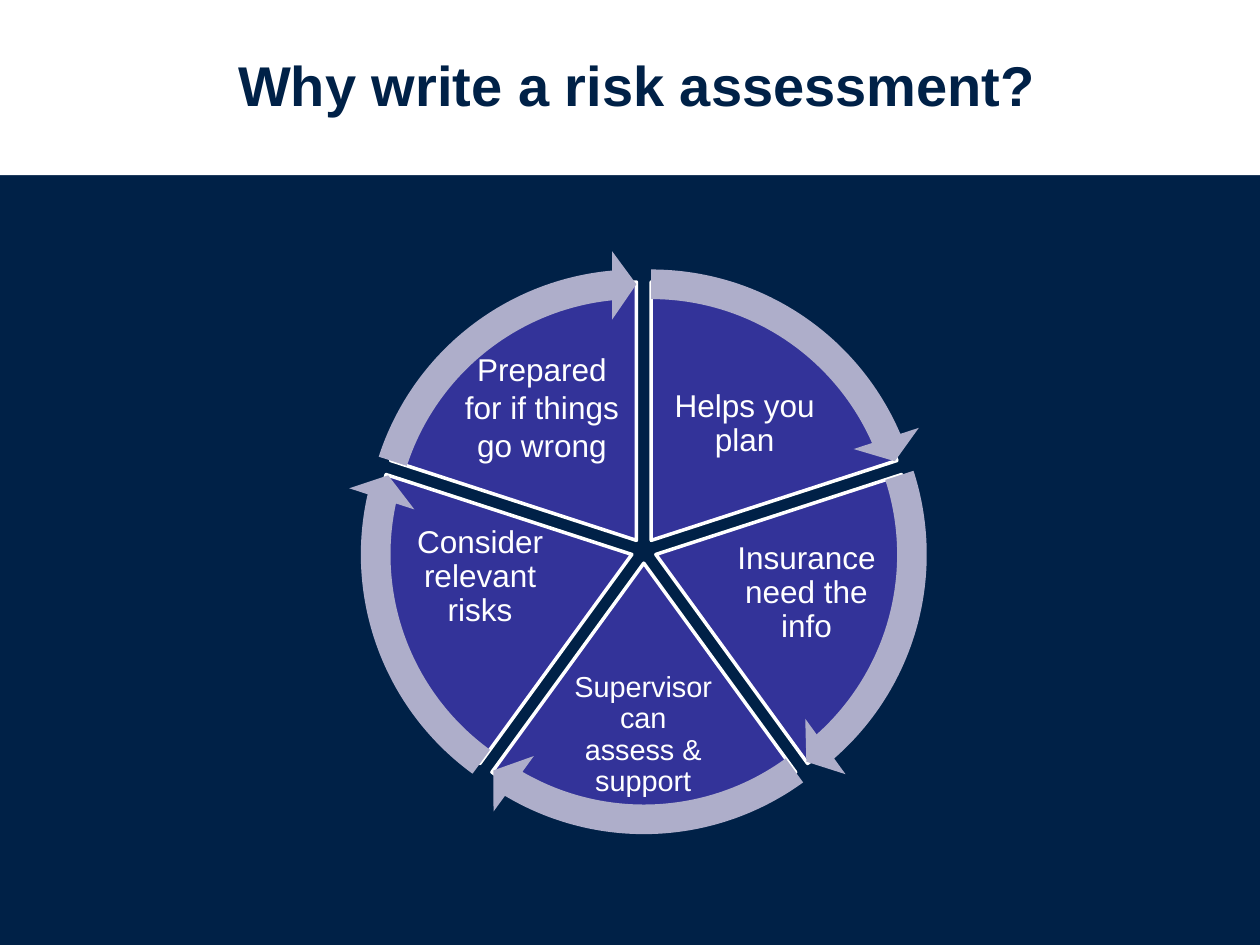
import math

from pptx import Presentation
from pptx.dml.color import RGBColor
from pptx.enum import shapes, text
from pptx.util import Inches, Pt

NAVY = RGBColor(0x00, 0x21, 0x47)
INDIGO = RGBColor(0x33, 0x33, 0x99)
LILAC = RGBColor(0xAE, 0xAE, 0xCA)
WHITE = RGBColor(0xFF, 0xFF, 0xFF)

TITLE = "Why write a risk assessment?"

# Clockwise from the top: wording, label box (left, top, width, height), size, line spacing
REASONS = [
    ("Helps you plan", (5.25, 2.93, 1.32, 0.88), 18, 0.9),
    ("Insurance need the info", (5.79, 4.22, 1.22, 0.98), 18, 0.9),
    ("Supervisor can assess & support", (4.52, 5.3, 1.17, 1.07), 16.5, 0.9),
    ("Consider relevant risks", (3.2, 4.09, 1.22, 0.98), 18, 0.9),
    ("Prepared for if things go wrong", (3.64, 2.79, 1.32, 0.88), 18, 1.0),
]

# Wheel geometry, in inches and degrees
CENTER_X, CENTER_Y = 5.11, 4.37
GAP = 0.1
PIE_SIZE, ARROW_SIZE = 4.1, 4.61
STEP = 360 / len(REASONS)
ARROW_SWEEP = 66.54
ARROW_WIDTH, HEAD_ANGLE, HEAD_WIDTH = 0.051, 3.275, 0.059


def angle_value(degrees):
    """Shape angles count 60000 per degree; adjustments are scaled by 100000."""
    return degrees % 360 * 0.6


def add_part(page, kind, place, fill, line=None, adjustments=()):
    part = page.shapes.add_shape(kind, *map(Inches, place))
    part.shadow.inherit = False
    part.fill.solid()
    part.fill.fore_color.rgb = fill
    if line is None:
        part.line.fill.background()
    else:
        part.line.color.rgb = line
        part.line.width = Pt(2)
    for index, value in enumerate(adjustments):
        part.adjustments[index] = value
    return part


def add_text(page, words, place, size, color, bold=False, spacing=1.0,
             align=text.PP_ALIGN.CENTER, inset=0.0):
    box = page.shapes.add_textbox(*map(Inches, place))
    frame = box.text_frame
    frame.word_wrap = True
    frame.vertical_anchor = text.MSO_ANCHOR.MIDDLE
    frame.margin_left = frame.margin_right = Inches(inset)
    frame.margin_top = frame.margin_bottom = Inches(inset)
    para = frame.paragraphs[0]
    para.alignment = align
    para.line_spacing = spacing
    span = para.add_run()
    span.text = words
    span.font.name = "Arial"
    span.font.size = Pt(size)
    span.font.bold = bold
    span.font.color.rgb = color
    return box


def wheel_place(index, size):
    """Square box of a sector, pushed outwards along the sector's middle."""
    middle = math.radians(270 + (index + 0.5) * STEP)
    left = CENTER_X + GAP * math.cos(middle) - size / 2
    top = CENTER_Y + GAP * math.sin(middle) - size / 2
    return left, top, size, size


def main():
    deck = Presentation()
    deck.slide_width, deck.slide_height = Inches(10), Inches(7.5)
    page = deck.slides.add_slide(deck.slide_layouts[6])
    page.background.fill.solid()
    page.background.fill.fore_color.rgb = NAVY

    # Title band
    add_part(page, shapes.MSO_SHAPE.RECTANGLE, (0, 0, 10, 1.39), WHITE)
    add_text(page, TITLE, (1.89, 0.13, 8.11, 1.1), 32, NAVY, bold=True,
             spacing=Pt(37), align=text.PP_ALIGN.LEFT)

    # Sectors with their labels
    for index, (words, place, size, spacing) in enumerate(REASONS):
        start = 270 + index * STEP
        add_part(page, shapes.MSO_SHAPE.PIE, wheel_place(index, PIE_SIZE), INDIGO, WHITE,
                 (angle_value(start), angle_value(start + STEP)))
        add_text(page, words, place, size, WHITE, spacing=spacing, inset=0.02)

    # Arrows round the rim
    for index in range(len(REASONS)):
        start = 270 + index * STEP
        add_part(page, shapes.MSO_SHAPE.CIRCULAR_ARROW, wheel_place(index, ARROW_SIZE), LILAC,
                 adjustments=(ARROW_WIDTH, HEAD_ANGLE, angle_value(start + ARROW_SWEEP),
                              angle_value(start), HEAD_WIDTH))

    deck.save("out.pptx")


if __name__ == "__main__":
    main()
